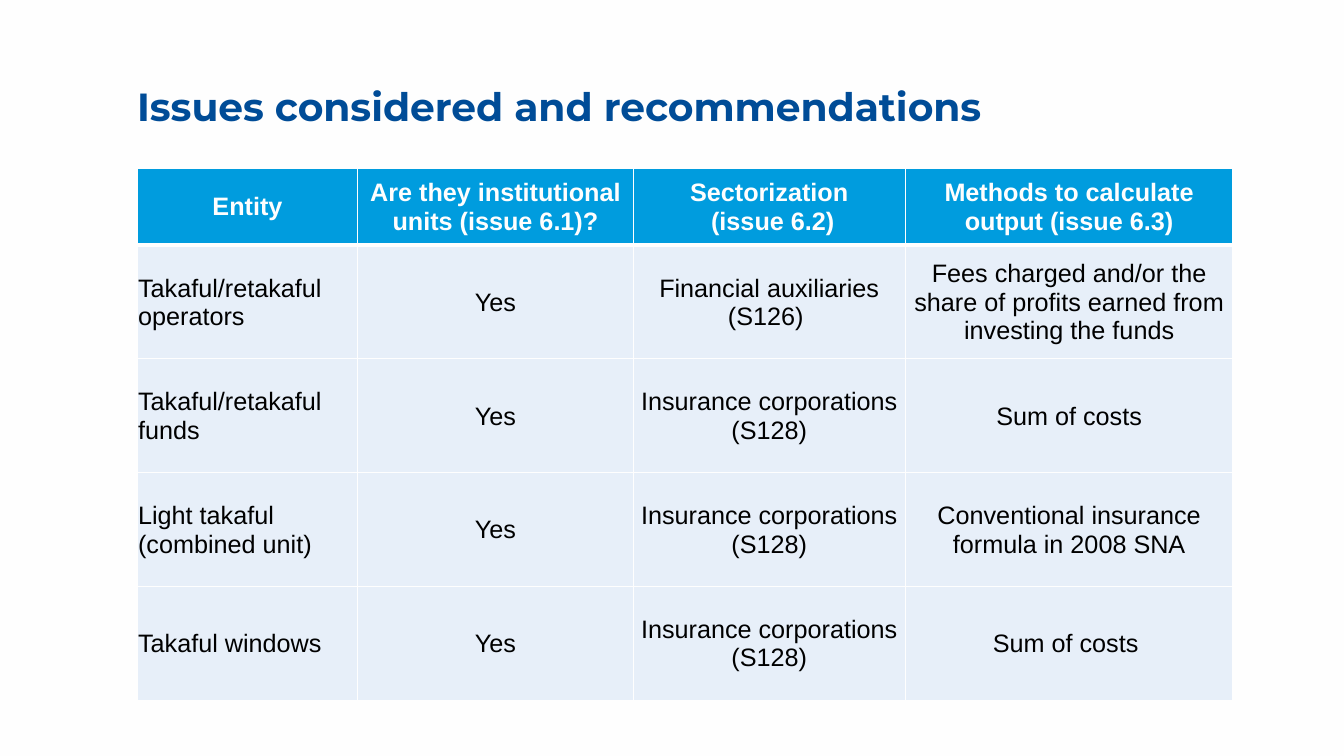
from dataclasses import dataclass
from lxml import etree
from pptx import Presentation
from pptx.dml.color import RGBColor
from pptx.enum.text import MSO_ANCHOR, PP_ALIGN
from pptx.oxml.ns import qn
from pptx.util import Inches, Pt

MIDDLE = MSO_ANCHOR.MIDDLE
LEFT, CENTER = PP_ALIGN.LEFT, PP_ALIGN.CENTER


@dataclass(frozen=True)
class Theme:
    """Colours, fonts and type sizes of the slide."""
    paper: str = "FEFEFE"
    navy: str = "004C97"
    blue: str = "009CDE"
    pale: str = "E7EFF9"
    ink: str = "000000"
    head: str = "Montserrat"
    body: str = "Arial"
    large: int = 28
    small: int = 18


THEME = Theme()
WIDTHS = (2.19, 2.73, 2.7, 3.25)
HEIGHTS = (0.76, 1.13, 1.13, 1.13, 1.13)
ROWS = (
    ("Entity", "Are they institutional units (issue 6.1)?",
     "Sectorization\n (issue 6.2)", "Methods to calculate output (issue 6.3)"),
    ("Takaful/retakaful operators", "Yes", "Financial auxiliaries (S126) ",
     "Fees charged and/or the share of profits earned from investing the funds"),
    ("Takaful/retakaful funds", "Yes", "Insurance corporations (S128)",
     "Sum of costs"),
    ("Light takaful (combined unit)", "Yes", "Insurance corporations (S128)",
     "Conventional insurance formula in 2008 SNA"),
    ("Takaful windows", "Yes", "Insurance corporations (S128)",
     "Sum of costs "),
)


def write(frame, text, *, size, font, color, bold=False, align=LEFT, space=1.0):
    """Fill a text frame with one formatted paragraph."""
    frame.word_wrap = True
    para = frame.paragraphs[0]
    para.text = text
    para.alignment = align
    para.line_spacing = space
    for run in para.runs:
        run.font.size = Pt(size)
        run.font.name = font
        run.font.bold = bold
        run.font.color.rgb = RGBColor.from_string(color)


def edge(cell, **sides):
    """Draw cell borders of the given widths in points."""
    props = cell._tc.get_or_add_tcPr()
    for spot, (side, width) in enumerate(sides.items()):
        line = etree.Element(qn(f"a:ln{side}"), w=str(Pt(width)))
        fill = etree.SubElement(line, qn("a:solidFill"))
        etree.SubElement(fill, qn("a:srgbClr"), val=THEME.paper)
        props.insert(spot, line)


def title(slide, text, left, top, width, height):
    """Place the slide title in its box."""
    box = slide.shapes.add_textbox(
        Inches(left), Inches(top), Inches(width), Inches(height))
    frame = box.text_frame
    frame.margin_left = frame.margin_right = 0
    frame.margin_top = frame.margin_bottom = 0
    frame.vertical_anchor = MIDDLE
    write(frame, text, size=THEME.large, font=THEME.head, color=THEME.navy,
          bold=True, space=0.9)


def grid(slide, rows, left, top, width, height):
    """Place the table of entities in its box."""
    table = slide.shapes.add_table(
        len(rows), len(WIDTHS), Inches(left), Inches(top),
        Inches(width), Inches(height)).table
    table.horz_banding = False
    for col, share in zip(table.columns, WIDTHS):
        col.width = Inches(width * share / sum(WIDTHS))
    for row, share in zip(table.rows, HEIGHTS):
        row.height = Inches(height * share / sum(HEIGHTS))
    for r, texts in enumerate(rows):
        first = r == 0
        for c, text in enumerate(texts):
            cell = table.cell(r, c)
            cell.margin_left = cell.margin_right = Inches(0.01)
            cell.margin_top, cell.margin_bottom = Inches(0.01), 0
            cell.vertical_anchor = MIDDLE
            cell.fill.solid()
            cell.fill.fore_color.rgb = RGBColor.from_string(
                THEME.blue if first else THEME.pale)
            edge(cell, L=1, R=1, T=3 if r == 1 else 1, B=3 if first else 1)
            write(cell.text_frame, text, size=THEME.small, font=THEME.body,
                  color=THEME.paper if first else THEME.ink, bold=first,
                  align=CENTER if first or c else LEFT)


def main():
    """Build and save the slide."""
    deck = Presentation()
    deck.slide_width, deck.slide_height = Inches(13.33), Inches(7.5)
    slide = deck.slides.add_slide(deck.slide_layouts[6])
    back = slide.background.fill
    back.solid()
    back.fore_color.rgb = RGBColor.from_string(THEME.paper)
    title(slide, "Issues considered and recommendations", 1.36, 0.54, 10.62, 1.07)
    grid(slide, ROWS, 1.36, 1.67, 10.87, 5.28)
    deck.save("out.pptx")


if __name__ == "__main__":
    main()
